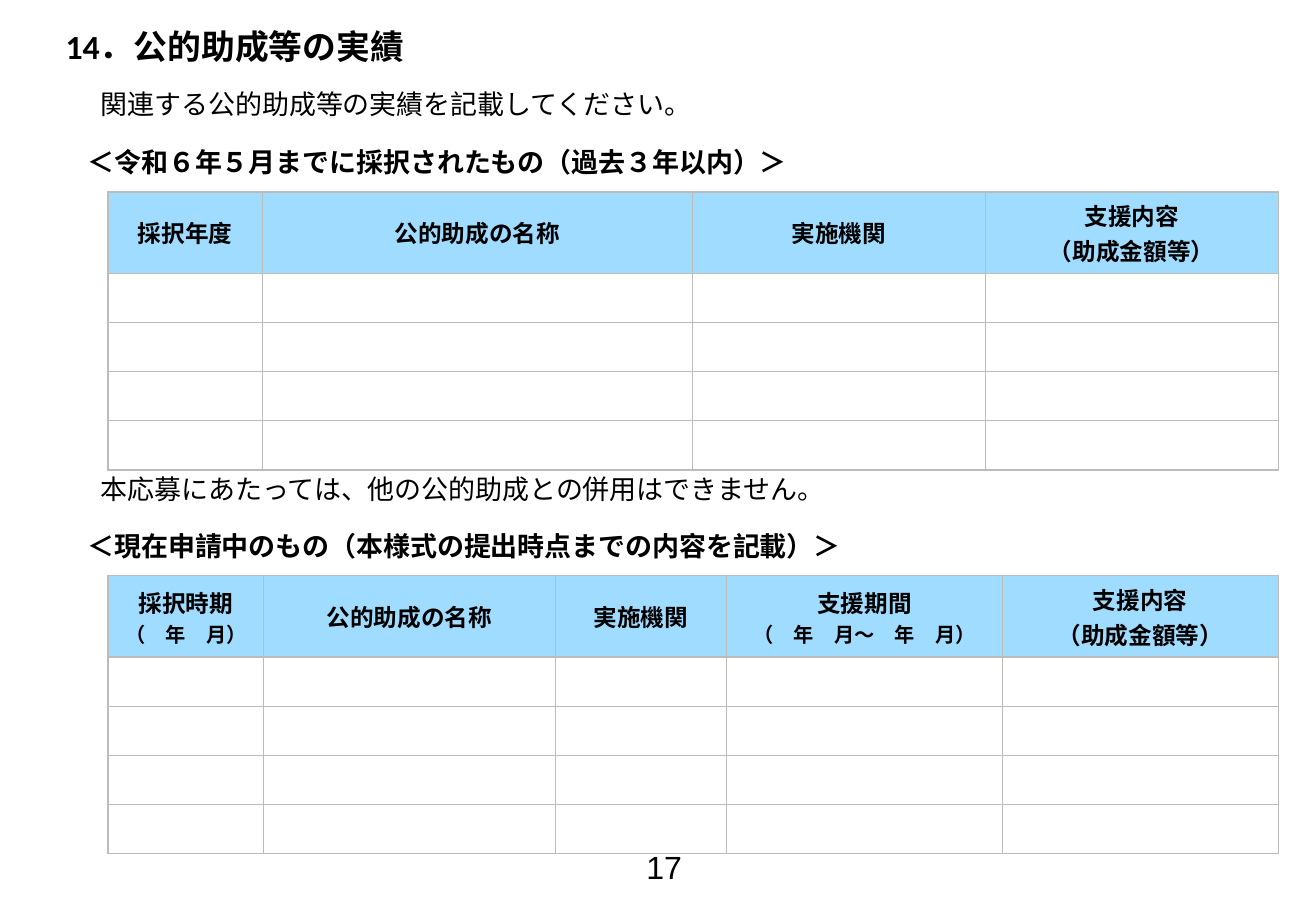
from lxml import etree
from pptx import Presentation
from pptx.dml.color import RGBColor
from pptx.enum import text
from pptx.oxml import ns
from pptx.util import Inches, Pt

# Content
HEADING = "14．公的助成等の実績"
PAGE_NUMBER = "17"
# wording, left, top, bold
LINES = [
    ("関連する公的助成等の実績を記載してください。", 0.75, 0.62, False),
    ("＜令和６年５月までに採択されたもの（過去３年以内）＞", 0.64, 1.1, True),
    ("本応募にあたっては、他の公的助成との併用はできません。", 0.75, 3.79, False),
    ("＜現在申請中のもの（本様式の提出時点までの内容を記載）＞", 0.64, 4.26, True),
]
# each column: width, then header lines as (wording, size)
SUPPORT = [("支援内容", 14), ("（助成金額等）", 14)]
GRANT = [("公的助成の名称", 14)]
AGENCY = [("実施機関", 14)]
ADOPTED = [
    (1.27, [("採択年度", 14)]),
    (3.54, GRANT),
    (2.41, AGENCY),
    (2.41, SUPPORT),
]
PENDING = [
    (1.28, [("採択時期", 14), ("（　年　月）", 12)]),
    (2.4, GRANT),
    (1.41, AGENCY),
    (2.27, [("支援期間", 14), ("（　年　月～　年　月）", 12)]),
    (2.27, SUPPORT),
]
TABLES = [(1.58, ADOPTED), (4.74, PENDING)]
TABLE_LEFT, HEADER_HEIGHT, ROW_HEIGHT, ENTRY_ROWS = 0.89, 0.67, 0.405, 4
BLACK, HEADER_FILL, GRID = "000000", "A0DCFF", "BCBCB9"


def color(hex_value):
    return RGBColor.from_string(hex_value)


def style(paragraph, wording, size, face, bold=False, align=text.PP_ALIGN.LEFT):
    paragraph.text = wording
    paragraph.alignment = align
    font = paragraph.font
    font.size, font.name, font.bold = Pt(size), face, bold
    font.color.rgb = color(BLACK)


def add_line(slide, wording, place, size, face, bold=False):
    frame = slide.shapes.add_textbox(*map(Inches, place)).text_frame
    frame.word_wrap = True
    style(frame.paragraphs[0], wording, size, face, bold)
    return frame


def add_borders(cell):
    properties = cell._tc.get_or_add_tcPr()
    for position, side in enumerate(("lnL", "lnR", "lnT", "lnB")):
        line = etree.Element(ns.qn(f"a:{side}"), w=str(Pt(1)))
        fill = etree.SubElement(line, ns.qn("a:solidFill"))
        etree.SubElement(fill, ns.qn("a:srgbClr"), val=GRID)
        properties.insert(position, line)


def add_grant_table(slide, top, columns):
    width = sum(column[0] for column in columns)
    height = HEADER_HEIGHT + ENTRY_ROWS * ROW_HEIGHT
    table = slide.shapes.add_table(
        ENTRY_ROWS + 1, len(columns),
        Inches(TABLE_LEFT), Inches(top), Inches(width), Inches(height)).table
    table.horz_banding = False
    for index, row in enumerate(table.rows):
        row.height = Inches(ROW_HEIGHT if index else HEADER_HEIGHT)
        for cell in row.cells:
            if index:
                cell.fill.background()
            else:
                cell.fill.solid()
                cell.fill.fore_color.rgb = color(HEADER_FILL)
            add_borders(cell)
    for index, (column_width, header) in enumerate(columns):
        table.columns[index].width = Inches(column_width)
        cell = table.cell(0, index)
        cell.vertical_anchor = text.MSO_ANCHOR.MIDDLE
        frame = cell.text_frame
        for number, (wording, size) in enumerate(header):
            paragraph = frame.add_paragraph() if number else frame.paragraphs[0]
            style(paragraph, wording, size, "Arial", True, text.PP_ALIGN.CENTER)


def main():
    deck = Presentation()
    deck.slide_width, deck.slide_height = Inches(10.83), Inches(7.5)
    slide = deck.slides.add_slide(deck.slide_layouts[5])

    # Heading
    title = slide.shapes.title
    title.left, title.top, title.width, title.height = map(
        Inches, (0.44, 0.14, 9.92, 0.48))
    title.text_frame.auto_size = text.MSO_AUTO_SIZE.NONE
    title.text_frame.vertical_anchor = text.MSO_ANCHOR.MIDDLE
    style(title.text_frame.paragraphs[0], HEADING, 20, "Calibri", True)

    # Instructions and table captions
    for wording, left, top, bold in LINES:
        frame = add_line(slide, wording, (left, top, 6.84, 0.47), 16, "Calibri", bold)
        frame.vertical_anchor = text.MSO_ANCHOR.MIDDLE
        frame.margin_left = Inches(0.08)
        frame.margin_top = frame.margin_right = frame.margin_bottom = 0

    # Grant tables
    for top, columns in TABLES:
        add_grant_table(slide, top, columns)

    # Page number
    add_line(slide, PAGE_NUMBER, (5.22, 6.93, 0.75, 0.4), 19, "Arial")
    deck.save("out.pptx")


if __name__ == "__main__":
    main()
